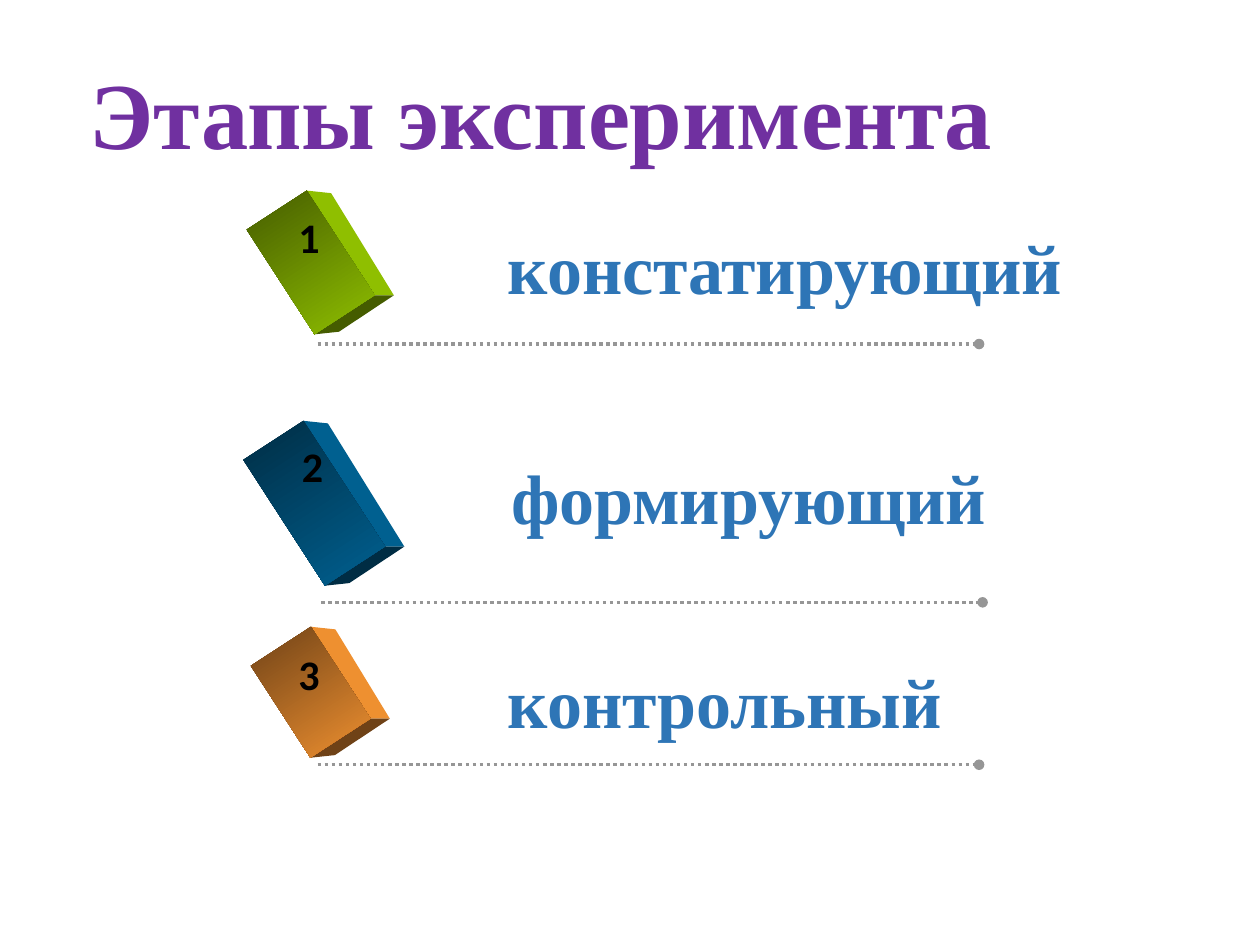
from math import cos, radians, sin

from lxml.etree import SubElement
from pptx import Presentation
from pptx.dml.color import RGBColor
from pptx.enum.dml import MSO_LINE
from pptx.enum.shapes import MSO_CONNECTOR, MSO_SHAPE
from pptx.enum.text import MSO_ANCHOR, PP_ALIGN
from pptx.oxml.ns import qn
from pptx.util import Pt

PURPLE = RGBColor(0x70, 0x30, 0xA0)
BLUE = RGBColor(0x2E, 0x75, 0xB6)
GRAY = RGBColor(0x96, 0x96, 0x96)
BLACK = RGBColor(0, 0, 0)
LIME = RGBColor(0x8F, 0xBF, 0x00)
MOSS = RGBColor(0x45, 0x5C, 0x00)
SEA = RGBColor(0x00, 0x60, 0x90)
NAVY = RGBColor(0x00, 0x2D, 0x44)
AMBER = RGBColor(0xEE, 0x90, 0x30)
BROWN = RGBColor(0x6F, 0x42, 0x17)


class Deck:
    serif = "Times New Roman"
    sans = "Calibri"
    tilt = 57
    thick = 41

    def __init__(self):
        self.prs = Presentation()
        self.prs.slide_width, self.prs.slide_height = Pt(720), Pt(540)
        self.slide = self.prs.slides.add_slide(self.prs.slide_layouts[6])

    def text(self, home, words, area, font, size, color, wrap=False):
        box = home.add_textbox(*map(Pt, area))
        frame = box.text_frame
        frame.word_wrap = wrap
        frame.text = words
        face = frame.paragraphs[0].runs[0].font
        face.name, face.size, face.bold = font, Pt(size), True
        face.color.rgb = color
        return frame

    def title(self, words, area):
        frame = self.text(self.slide.shapes, words, area, self.serif, 54, PURPLE, True)
        frame.vertical_anchor = MSO_ANCHOR.MIDDLE
        frame.paragraphs[0].alignment = PP_ALIGN.CENTER
        frame.paragraphs[0].line_spacing = 0.9

    def rule(self, home, left, top, width):
        rule = home.add_connector(
            MSO_CONNECTOR.STRAIGHT, Pt(left), Pt(top), Pt(left + width), Pt(top))
        rule.line.color.rgb = GRAY
        rule.line.width = Pt(2)
        rule.line.dash_style = MSO_LINE.ROUND_DOT
        SubElement(rule.line._get_or_add_ln(), qn("a:tailEnd"), type="oval")
        SubElement(rule._element.spPr, qn("a:effectLst"))

    def face(self, home, points, color):
        pen = home.build_freeform(Pt(points[0][0]), Pt(points[0][1]))
        pen.add_line_segments([(Pt(x), Pt(y)) for x, y in points[1:]])
        face = pen.convert_to_shape()
        face.shadow.inherit = False
        face.fill.solid()
        face.fill.fore_color.rgb = color
        face.line.fill.background()

    def block(self, home, mid_x, mid_y, length, light, dark):
        turn = radians(self.tilt)

        def spot(along, across, dx=0, dy=0):
            u, v = along * length / 2, across * self.thick / 2
            return (mid_x + u * cos(turn) - v * sin(turn) + dx,
                    mid_y + u * sin(turn) + v * cos(turn) + dy)

        near, far = spot(1, -1), spot(1, -1, 11)
        self.face(home, [spot(-1, -1), spot(-1, -1, 14, 1.5), far, near], light)
        self.face(home, [spot(1, 1), near, far, spot(1, 1, 14, -1.5)], dark)
        front = home.add_shape(
            MSO_SHAPE.RECTANGLE, Pt(mid_x - length / 2), Pt(mid_y - self.thick / 2),
            Pt(length), Pt(self.thick))
        front.rotation = self.tilt
        front.shadow.inherit = False
        front.line.fill.background()
        front.fill.gradient()
        front.fill.gradient_angle = 0
        for stop, color in zip(front.fill.gradient_stops, (dark, light)):
            stop.color.rgb = color

    def stage(self, mark, words, shift, rule, block, label, digit):
        home = self.slide.shapes.add_group_shape().shapes
        self.rule(home, 181.5 + shift, rule, 378)
        self.block(home, 177.5 + shift, *block)
        top, width = label
        self.text(home, words, (283 + shift, top, width, 56), self.serif, 40, BLUE)
        top, height = digit
        self.text(home, mark, (163.4 + shift, top, 26.6, height), self.sans, 24, BLACK)


def main():
    deck = Deck()
    deck.title("Этапы эксперимента", (26, 32.4, 566.6, 70.6))
    stages = [
        ("констатирующий", 0, 196.6, (150, 71.3, LIME, MOSS), (124.6, 334.8), (117.4, 68.4)),
        ("формирующий", 2, 344.2, (287.6, 85.7, SEA, NAVY), (256.3, 288.7), (248.4, 82.8)),
        ("контрольный", 0, 437, (395.6, 62.6, AMBER, BROWN), (373, 265), (367.2, 60.5)),
    ]
    for count, stage in enumerate(stages, 1):
        deck.stage(str(count), *stage)
    deck.prs.save("out.pptx")


if __name__ == "__main__":
    main()
